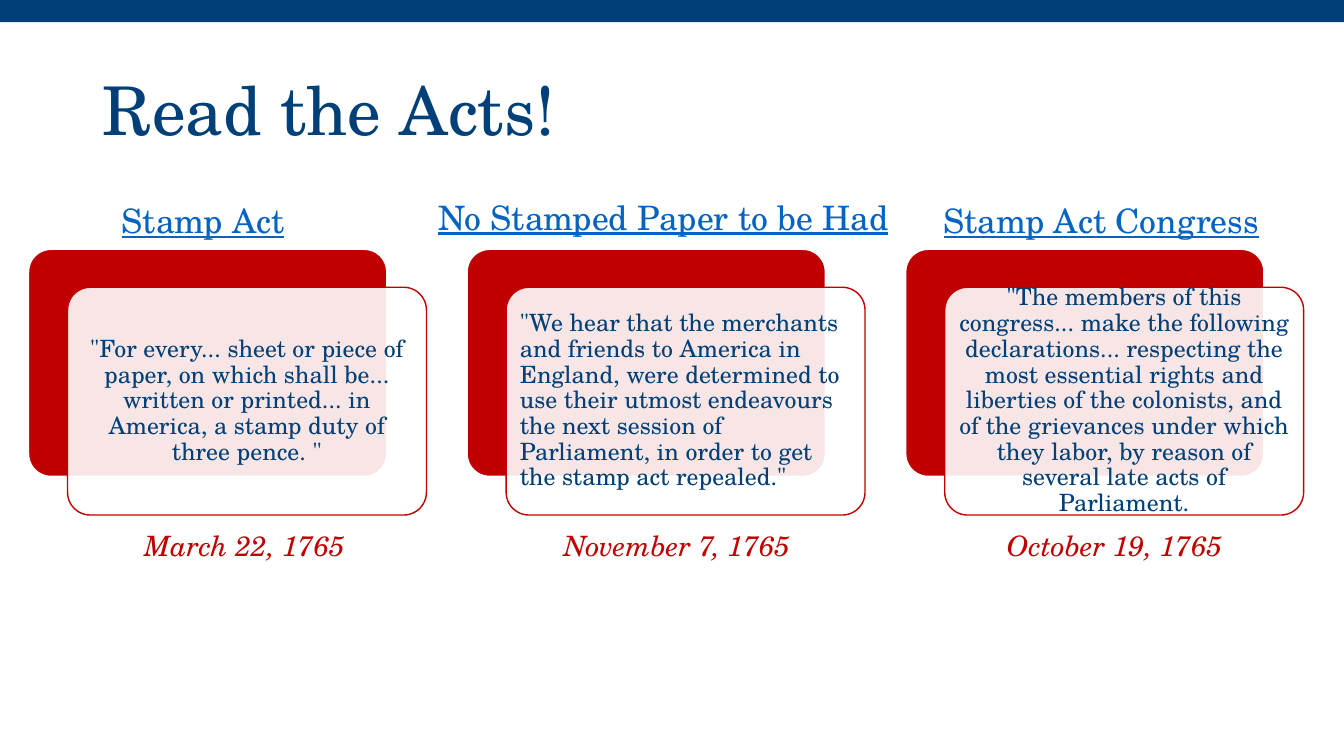
import pptx
import pptx.dml.color
import pptx.enum.shapes
import pptx.enum.text
import pptx.oxml.ns
import pptx.util
from lxml import etree

Inches = pptx.util.Inches
Pt = pptx.util.Pt
RGBColor = pptx.dml.color.RGBColor
Shape = pptx.enum.shapes.MSO_SHAPE
Align = pptx.enum.text.PP_ALIGN
Anchor = pptx.enum.text.MSO_ANCHOR

NAVY = RGBColor(0x00, 0x3F, 0x77)
RED = RGBColor(0xC0, 0x00, 0x00)
LINK_BLUE = RGBColor(0x05, 0x63, 0xC1)
WHITE = RGBColor(0xFF, 0xFF, 0xFF)

CARD_WIDTH, CARD_HEIGHT = 3.56, 2.26
CARD_LEFT, CARD_TOP, CARD_STEP = 0.28, 2.47, 4.35
FRONT_SHIFT_X, FRONT_SHIFT_Y = 0.39, 0.38

# heading, its left, top and width, quote, quote alignment, date, date left
ACTS = [
    ("Stamp Act", 1.11, 1.93, 3.99,
     "\"For every... sheet or piece of paper, on which shall be... written or printed... "
     "in America, a stamp duty of three pence. \"",
     Align.CENTER, "March 22, 1765", 0.92),
    ("No Stamped Paper to be Had", 4.25, 1.9, 4.91,
     "\"We hear that the merchants and friends to America in England, were determined to "
     "use their utmost endeavours the next session of Parliament, in order to get the "
     "stamp act repealed.\"",
     Align.LEFT, "November 7, 1765", 5.21),
    ("Stamp Act Congress", 9.26, 1.93, 3.99,
     "\"The members of this congress... make the following declarations... respecting the "
     "most essential rights and liberties of the colonists, and of the grievances under "
     "which they labor, by reason of several late acts of Parliament.",
     Align.CENTER, "October 19, 1765", 9.55),
]


class ActsSlide:
    font_name = "TeX Gyre Schola"

    def __init__(self, presentation):
        self.slide = presentation.slides.add_slide(presentation.slide_layouts[5])

    def set_text(self, shape, text, size, color, align=Align.LEFT, spacing=1.0):
        """Set one paragraph of text in the shape and return its run's font."""
        shape.text_frame.text = text
        shape.text_frame.word_wrap = True
        paragraph = shape.text_frame.paragraphs[0]
        paragraph.alignment = align
        paragraph.line_spacing = spacing
        font = paragraph.runs[0].font
        font.name, font.size = self.font_name, Pt(size)
        font.color.rgb = color
        return font

    def title(self, text, left, top, width, height):
        title = self.slide.shapes.title
        title.left, title.top = Inches(left), Inches(top)
        title.width, title.height = Inches(width), Inches(height)
        title.text_frame.vertical_anchor = Anchor.MIDDLE
        self.set_text(title, text, 48, NAVY, spacing=0.9)

    def text_box(self, text, left, top, width, height, size, color, align=Align.LEFT):
        box = self.slide.shapes.add_textbox(
            Inches(left), Inches(top), Inches(width), Inches(height))
        return self.set_text(box, text, size, color, align)

    def block(self, kind, left, top, width, height, fill, line=None, line_width=1):
        shape = self.slide.shapes.add_shape(
            kind, Inches(left), Inches(top), Inches(width), Inches(height))
        shape.shadow.inherit = False
        shape.fill.solid()
        shape.fill.fore_color.rgb = fill
        if line is None:
            shape.line.fill.background()
        else:
            shape.line.color.rgb = line
            shape.line.width = Pt(line_width)
        return shape

    def card(self, left, top, fill, line, line_width):
        shape = self.block(Shape.ROUNDED_RECTANGLE, left, top, CARD_WIDTH, CARD_HEIGHT,
                           fill, line, line_width)
        shape.adjustments[0] = 0.1
        return shape

    def quote_card(self, left, top, quote, align):
        """Place a red card with a translucent quote card shifted in front of it."""
        self.card(left, top, RED, WHITE, 1.5)
        front = self.card(left + FRONT_SHIFT_X, top + FRONT_SHIFT_Y, WHITE, RED, 1)
        fill_color = front.element.spPr.find(".//" + pptx.oxml.ns.qn("a:srgbClr"))
        etree.SubElement(fill_color, pptx.oxml.ns.qn("a:alpha"), val="90000")
        frame = front.text_frame
        frame.vertical_anchor = Anchor.MIDDLE
        frame.margin_left = frame.margin_right = Inches(0.07)
        frame.margin_top = frame.margin_bottom = Inches(0.07)
        self.set_text(front, quote, 17, NAVY, align, 0.9)


def main():
    presentation = pptx.Presentation()
    presentation.slide_width = Inches(13.33)
    presentation.slide_height = Inches(7.5)
    acts_slide = ActsSlide(presentation)
    acts_slide.block(Shape.RECTANGLE, 0, 0, 13.33, 0.22, NAVY)
    acts_slide.title("Read the Acts!", 0.92, 0.4, 11.5, 1.45)
    for index, act in enumerate(ACTS):
        heading, heading_left, heading_top, heading_width, quote, align, date, date_left = act
        acts_slide.quote_card(CARD_LEFT + index * CARD_STEP, CARD_TOP, quote, align)
        acts_slide.text_box(heading, heading_left, heading_top, heading_width, 0.5,
                            24, LINK_BLUE).underline = True
        acts_slide.text_box(date, date_left, 5.19, 3.01, 0.44,
                            20, RED, Align.CENTER).italic = True
    presentation.save("out.pptx")


if __name__ == "__main__":
    main()
